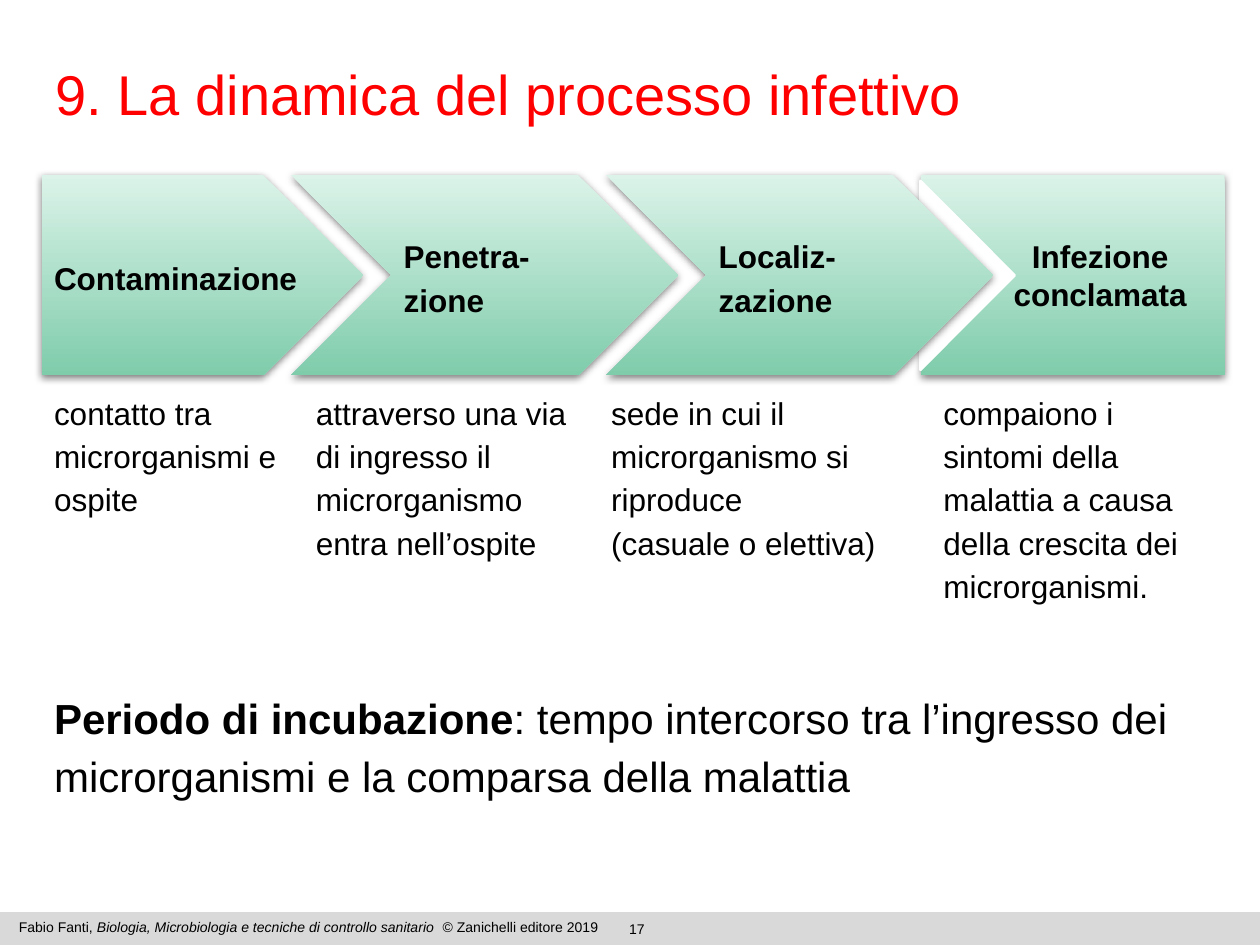
from lxml.etree import SubElement
from pptx import Presentation
from pptx.dml.color import RGBColor
from pptx.enum.shapes import MSO_SHAPE
from pptx.enum.text import MSO_ANCHOR, PP_ALIGN
from pptx.oxml.ns import qn
from pptx.util import Cm, Pt

BAND_TOP, BAND_HEIGHT, STAGE_PITCH = 3.53, 4.04, 6.35
BODY_INSETS = (0.25, 0.25, 0.25, 0.25)
LINE_INSETS = (0.25, 0.13, 0.25, 0.13)


def color(value):
    """Turn a hex string into a colour."""
    return RGBColor.from_string(value)


def apply(target, values):
    """Set each attribute of target listed in a dict of values."""
    for name, value in values.items():
        setattr(target, name, value)


def write(shape, paragraphs, size, ink="000000", insets=BODY_INSETS,
          anchor=MSO_ANCHOR.TOP, **layout):
    """Fill a shape with paragraphs, each a list of (text, font values) runs."""
    frame = shape.text_frame
    left, top, right, bottom = map(Cm, insets)
    apply(frame, {"word_wrap": True, "vertical_anchor": anchor,
                  "margin_left": left, "margin_top": top,
                  "margin_right": right, "margin_bottom": bottom})
    for index, runs in enumerate(paragraphs):
        paragraph = frame.add_paragraph() if index else frame.paragraphs[0]
        apply(paragraph, {"alignment": PP_ALIGN.LEFT, **layout})
        for text, style in runs:
            run = paragraph.add_run()
            run.text = text
            apply(run.font, {"name": "Arial", "size": Pt(size), **style})
            run.font.color.rgb = color(ink)


def add_box(slide, place, fill, line=None, line_width=0.75, kind=MSO_SHAPE.RECTANGLE):
    """Add a flat shape with a plain fill and an optional outline."""
    box = slide.shapes.add_shape(kind, *map(Cm, place))
    box.shadow.inherit = False
    box.fill.solid()
    box.fill.fore_color.rgb = color(fill)
    if line:
        box.line.color.rgb = color(line)
        box.line.width = Pt(line_width)
    else:
        box.line.fill.background()
    return box


def add_label(slide, place, paragraphs, size, **layout):
    """Add a text box."""
    label = slide.shapes.add_textbox(*map(Cm, place))
    write(label, paragraphs, size, **layout)


def add_stage(slide, kind, left, width, lines, **layout):
    """Add a green gradient stage with a soft shadow and a bold name."""
    stage = slide.shapes.add_shape(
        kind, Cm(left), Cm(BAND_TOP), Cm(width), Cm(BAND_HEIGHT))
    stage.fill.gradient()
    stage.fill.gradient_angle = 270
    for stop, shade in zip(stage.fill.gradient_stops, ("DBF3E9", "7FCCAB")):
        stop.color.rgb = color(shade)
    stage.line.fill.background()
    stage.shadow.inherit = False
    effects = stage.element.spPr.find(qn("a:effectLst"))
    shadow = SubElement(effects, qn("a:outerShdw"), blurRad=str(Pt(4.5)),
                        dist=str(Pt(1.5)), dir="5400000", rotWithShape="0")
    black = SubElement(shadow, qn("a:srgbClr"), val="000000")
    SubElement(black, qn("a:alpha"), val="50000")
    write(stage, [[(line, {"bold": True})] for line in lines], 18,
          anchor=MSO_ANCHOR.MIDDLE, **layout)


def add_footer(slide):
    """Add the grey bar with the page number and the book's credit line."""
    add_box(slide, (0, 18.39, 25.4, 0.66), "D9D9D9")
    add_label(slide, (10.01, 18.42, 5.66, 0.43), [[("17", {})]], 8,
              insets=LINE_INSETS, alignment=PP_ALIGN.CENTER)
    credit = [("Fabio Fanti, ", {}),
              ("Biologia, Microbiologia e tecniche di controllo sanitario", {"italic": True}),
              ("  © Zanichelli editore 2019", {})]
    add_label(slide, (0.13, 18.39, 12.8, 0.61), [credit], 8, insets=LINE_INSETS)


def add_process(slide):
    """Add the four stages of infection, the last one notched by a white wedge."""
    first_chevron = 5.87
    add_stage(slide, MSO_SHAPE.PENTAGON, 0.84, 6.48, ["Contaminazione"], line_spacing=1.15)
    add_stage(slide, MSO_SHAPE.CHEVRON, first_chevron, 7.8,
              ["Penetra-", "zione"], line_spacing=1.15)
    add_stage(slide, MSO_SHAPE.RECTANGLE, first_chevron + 2 * STAGE_PITCH, 6.12,
              ["Infezione", "conclamata"], insets=(1.35, 0.25, 0.25, 0.25),
              alignment=PP_ALIGN.CENTER)
    wedge = add_box(slide, (17.6, 4.6, 3.81, 1.9), "FFFFFF", "FFFFFF", 1.5,
                    MSO_SHAPE.FLOWCHART_MERGE)
    wedge.rotation = 270
    add_stage(slide, MSO_SHAPE.CHEVRON, first_chevron + STAGE_PITCH, 7.8,
              ["Localiz-", "zazione"], line_spacing=1.15)


def add_descriptions(slide):
    """Add the explanation below each stage."""
    descriptions = [
        (0.84, 5.69, 2.34, ["contatto tra microrganismi e ospite"]),
        (6.12, 6.12, 2.92, ["attraverso una via di ingresso il microrganismo entra nell’ospite"]),
        (12.07, 6.48, 4.42, ["sede in cui il microrganismo si riproduce",
                             "(casuale o elettiva)"]),
        (18.77, 5.89, 2.79, ["compaiono i sintomi della malattia a causa "
                             "della crescita dei microrganismi."]),
    ]
    for left, width, height, lines in descriptions:
        add_label(slide, (left, BAND_TOP + BAND_HEIGHT, width, height),
                  [[(line, {})] for line in lines], 18, line_spacing=1.15)


def main():
    """Build the slide and save it."""
    deck = Presentation()
    apply(deck, {"slide_width": Cm(25.4), "slide_height": Cm(19.05)})
    slide = deck.slides.add_slide(deck.slide_layouts[6])
    add_footer(slide)
    title = add_box(slide, (0.89, 1.07, 24.51, 2.46), "FFFFFF", "FFFFFF")
    write(title, [[("9. La dinamica del processo infettivo", {})]], 32, "FF0000",
          insets=(0.23, 0.13, 0.23, 0.13))
    incubation = add_box(slide, (0.84, 13.56, 23.85, 3.63), "FFFFFF", "FFFFFF")
    write(incubation, [[("Periodo di incubazione", {"bold": True}),
                        (": tempo intercorso tra l’ingresso dei microrganismi "
                         "e la comparsa della malattia", {})]], 24, line_spacing=1.15)
    add_descriptions(slide)
    add_process(slide)
    deck.save("out.pptx")


if __name__ == "__main__":
    main()
